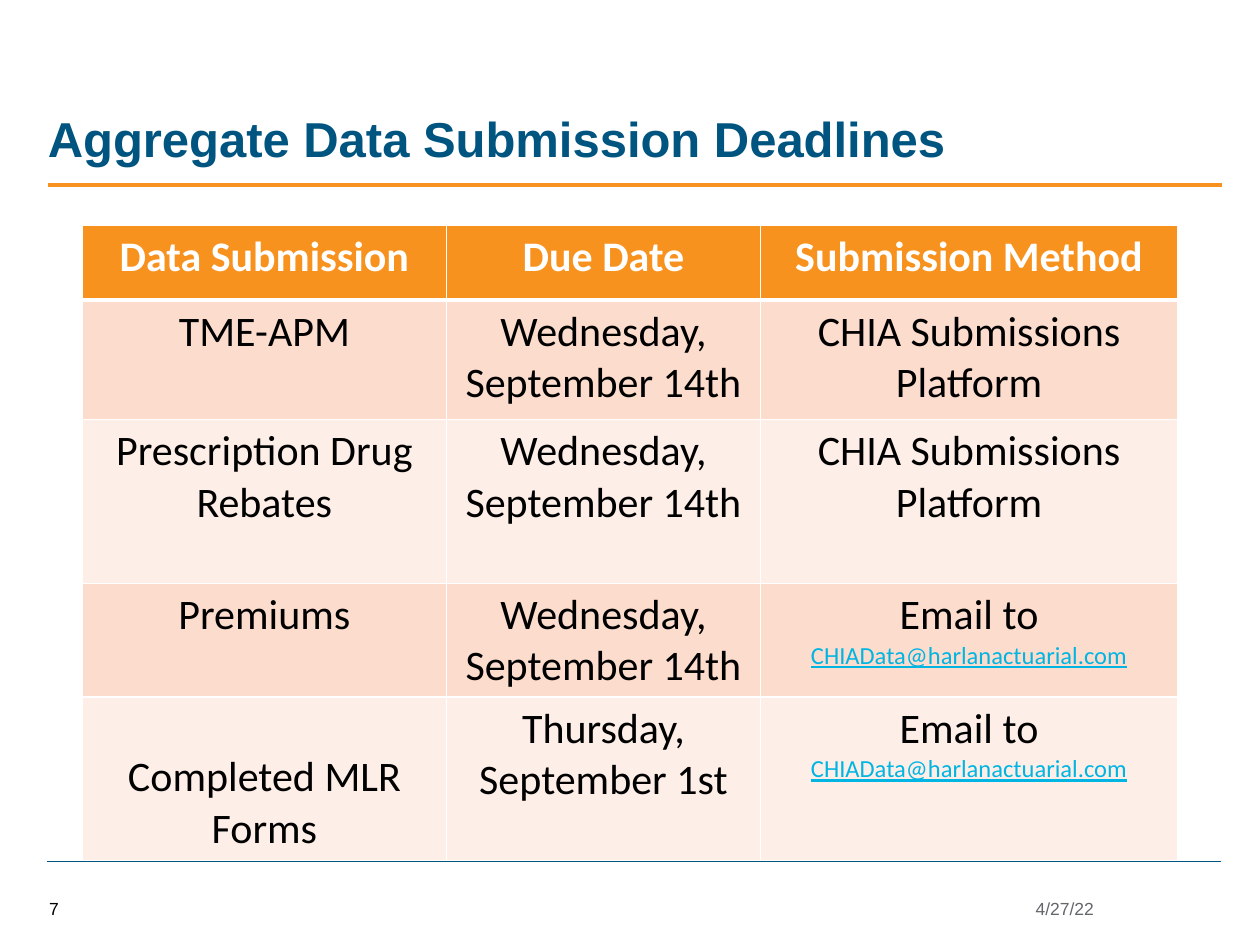
"""Build the aggregate data submission deadlines slide."""
from dataclasses import dataclass

from lxml.etree import SubElement
from pptx import Presentation
from pptx.dml.color import RGBColor
from pptx.enum.shapes import MSO_CONNECTOR
from pptx.enum.text import MSO_ANCHOR, PP_ALIGN
from pptx.oxml.ns import qn
from pptx.util import Cm, Pt

NAVY, ORANGE, BLACK, WHITE = "005480", "F7921E", "000000", "FFFFFF"
GRAY, LINK_BLUE = "63666A", "00B5E2"
HEADER_FILL, BODY_FILLS = "F8921E", ("FCDCCD", "FEEEE8")
EMAIL_ADDRESS = "CHIAData@harlanactuarial.com"
PLATFORM = "CHIA Submissions Platform"
MID_SEPTEMBER = "Wednesday, September 14th"
HEADINGS = ("Data Submission", "Due Date", "Submission Method")
COLUMN_WIDTHS = (7.34, 6.33, 8.41)
HEADER_HEIGHT = 1.5


@dataclass
class Deadline:
    submission: str
    due_date: str
    method: str
    height: float
    address: str = ""
    anchor: MSO_ANCHOR = MSO_ANCHOR.TOP


@dataclass
class Rule:
    left: float
    top: float
    color: str
    weight: float


@dataclass
class FooterText:
    text: str
    left: float
    width: float
    color: str
    alignment: PP_ALIGN


DEADLINES = (
    Deadline("TME-APM", MID_SEPTEMBER, PLATFORM, 2.41),
    Deadline("Prescription Drug Rebates", MID_SEPTEMBER, PLATFORM, 3.3),
    Deadline("Premiums", MID_SEPTEMBER, "Email to ", 2.29, EMAIL_ADDRESS),
    Deadline("Completed MLR Forms", "Thursday, September 1st", "Email to ", 3.3,
             EMAIL_ADDRESS, MSO_ANCHOR.BOTTOM),
)
RULES = (Rule(0.94, 17.37, NAVY, 0.75), Rule(0.97, 3.73, ORANGE, 2.25))
FOOTERS = (
    FooterText("7", 0.74, 1.47, BLACK, PP_ALIGN.LEFT),
    FooterText("4/27/22", 4.32, 17.98, GRAY, PP_ALIGN.RIGHT),
)


def rgb(color: str) -> RGBColor:
    """Turn a hex string into a colour."""
    return RGBColor.from_string(color)


def set_font(font, name: str, size: float, color: str, bold: bool = False) -> None:
    """Format a paragraph or run font."""
    font.name, font.size, font.bold = name, Pt(size), bold
    font.color.rgb = rgb(color)


def add_title(slide, text: str) -> None:
    """Fill and place the title placeholder."""
    title = slide.shapes.title
    title.left, title.top, title.width, title.height = Cm(0.71), Cm(2.06), Cm(22.3), Cm(1.45)
    title.text_frame.text = text
    title.text_frame.vertical_anchor = MSO_ANCHOR.BOTTOM
    paragraph = title.text_frame.paragraphs[0]
    paragraph.alignment = PP_ALIGN.LEFT
    set_font(paragraph.font, "Arial", 28, NAVY, True)


def add_rule(slide, rule: Rule) -> None:
    """Draw a horizontal rule without a shadow."""
    connector = slide.shapes.add_connector(
        MSO_CONNECTOR.STRAIGHT, Cm(rule.left), Cm(rule.top), Cm(rule.left + 23.67), Cm(rule.top))
    connector.line.color.rgb = rgb(rule.color)
    connector.line.width = Pt(rule.weight)
    SubElement(connector._element.spPr, qn("a:effectLst"))


def add_footer(slide, footer: FooterText) -> None:
    """Add one footer text box."""
    shape = slide.shapes.add_textbox(Cm(footer.left), Cm(17.8), Cm(footer.width), Cm(1.02))
    frame = shape.text_frame
    frame.word_wrap = True
    frame.vertical_anchor = MSO_ANCHOR.MIDDLE
    frame.text = footer.text
    paragraph = frame.paragraphs[0]
    paragraph.alignment = footer.alignment
    set_font(paragraph.font, "Arial", 10, footer.color)


def style_cell(cell, fill: str, top: float = 1, bottom: float = 1) -> None:
    """Give a cell white borders and a solid fill."""
    properties = cell._tc.get_or_add_tcPr()
    for tag, weight in (("lnL", 1), ("lnR", 1), ("lnT", top), ("lnB", bottom)):
        border = SubElement(properties, qn(f"a:{tag}"), w=str(Pt(weight)))
        solid = SubElement(border, qn("a:solidFill"))
        SubElement(solid, qn("a:srgbClr"), val=WHITE)
    cell.fill.solid()
    cell.fill.fore_color.rgb = rgb(fill)


def write_cell(cell, text: str, color: str, bold: bool = False, address: str = "") -> None:
    """Write centred cell text, with an optional underlined address."""
    paragraph = cell.text_frame.paragraphs[0]
    paragraph.alignment = PP_ALIGN.CENTER
    set_font(paragraph.font, "Calibri", 24, color, bold)
    set_font(_add_run(paragraph, text), "Calibri", 24, color, bold)
    if address:
        font = _add_run(paragraph, address)
        set_font(font, "Calibri", 14, LINK_BLUE)
        font.underline = True


def _add_run(paragraph, text: str):
    """Add a run and return its font."""
    run = paragraph.add_run()
    run.text = text
    return run.font


def add_deadline_table(slide) -> None:
    """Add the table of submissions, dates and methods."""
    heights = (HEADER_HEIGHT, *(deadline.height for deadline in DEADLINES))
    table = slide.shapes.add_table(
        len(heights), len(HEADINGS), Cm(1.66), Cm(4.55),
        Cm(sum(COLUMN_WIDTHS)), Cm(sum(heights))).table
    for column, width in zip(table.columns, COLUMN_WIDTHS):
        column.width = Cm(width)
    for row, height in zip(table.rows, heights):
        row.height = Cm(height)
    for cell, heading in zip(table.rows[0].cells, HEADINGS):
        style_cell(cell, HEADER_FILL, bottom=3)
        write_cell(cell, heading, WHITE, True)
    for index, deadline in enumerate(DEADLINES):
        cells = list(table.rows[index + 1].cells)
        for cell in cells:
            style_cell(cell, BODY_FILLS[index % 2], top=1 if index else 3)
        write_cell(cells[0], deadline.submission, BLACK)
        cells[0].vertical_anchor = deadline.anchor
        write_cell(cells[1], deadline.due_date, BLACK)
        write_cell(cells[2], deadline.method, BLACK, address=deadline.address)


def main() -> None:
    """Build and save the presentation."""
    presentation = Presentation()
    presentation.slide_width, presentation.slide_height = Cm(25.4), Cm(19.05)
    slide = presentation.slides.add_slide(presentation.slide_layouts[5])
    add_title(slide, "Aggregate Data Submission Deadlines")
    for rule in RULES:
        add_rule(slide, rule)
    for footer in FOOTERS:
        add_footer(slide, footer)
    add_deadline_table(slide)
    presentation.save("out.pptx")


if __name__ == "__main__":
    main()
